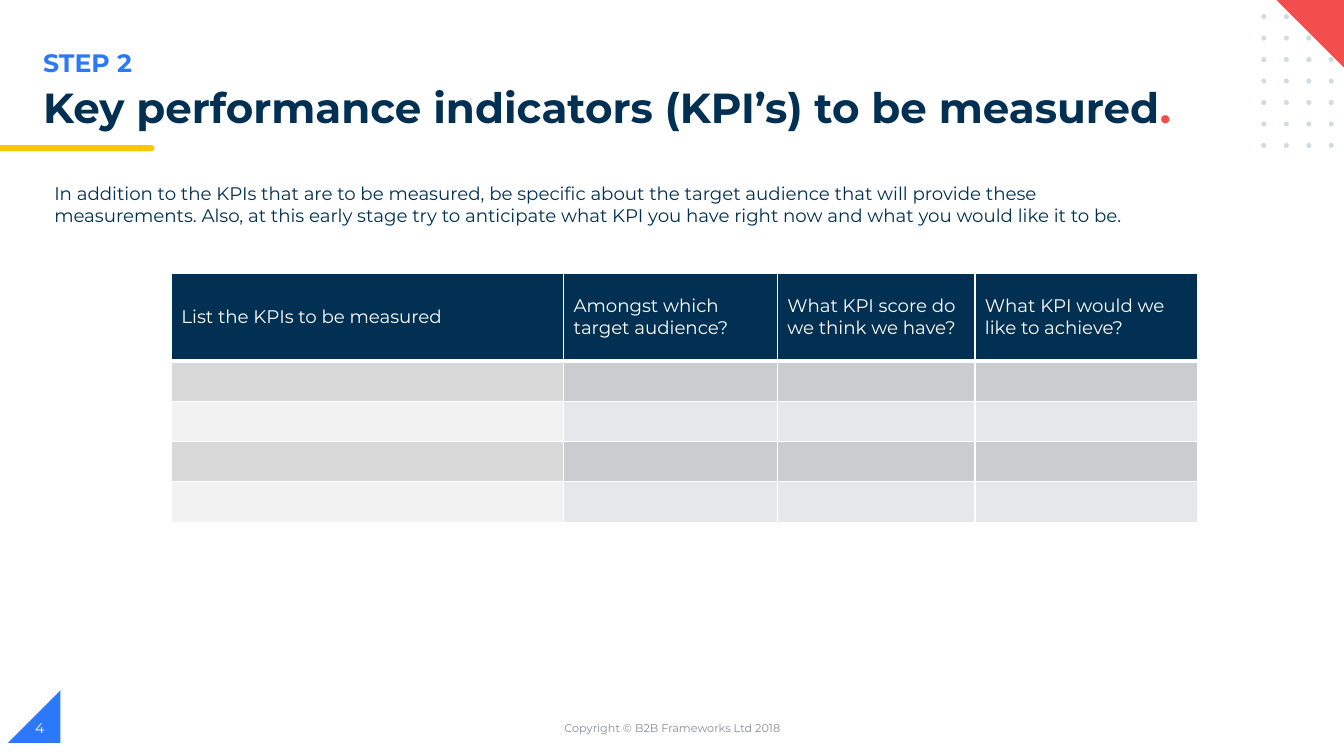
from lxml import etree
from pptx import Presentation
from pptx.dml.color import RGBColor
from pptx.enum import shapes, text
from pptx.oxml import ns
from pptx.util import Inches, Pt

NAVY = RGBColor(0x02, 0x30, 0x53)
BLUE = RGBColor(0x2B, 0x79, 0xF8)
RED = RGBColor(0xF2, 0x4E, 0x4E)
GOLD = RGBColor(0xFF, 0xC6, 0x00)
MIST = RGBColor(0xD1, 0xDB, 0xE0)
GREY = RGBColor(0x88, 0x8C, 0x97)
WHITE = RGBColor(0xFF, 0xFF, 0xFF)
# First column and other columns, for odd and even rows
BANDS = [(RGBColor(0xD8, 0xD8, 0xD8), RGBColor(0xCA, 0xCC, 0xCF)),
         (RGBColor(0xF2, 0xF2, 0xF2), RGBColor(0xE6, 0xE7, 0xE9))]
KIND = shapes.MSO_SHAPE
MIDDLE = text.MSO_ANCHOR.MIDDLE


def write(para, words, size=13, color=NAVY, bold=False, font="Montserrat"):
    run = para.add_run()
    run.text = words
    run.font.name = font
    run.font.size = Pt(size)
    run.font.bold = bold
    run.font.color.rgb = color


def edge(cell, side, width):
    """Draw one white border of a table cell."""
    line = etree.Element(ns.qn("a:ln" + side), w=str(Pt(width)))
    fill = etree.SubElement(line, ns.qn("a:solidFill"))
    etree.SubElement(fill, ns.qn("a:srgbClr"), val=str(WHITE))
    return line


class Deck:
    def __init__(self):
        self.show = Presentation()
        self.show.slide_width = Inches(13.33)
        self.show.slide_height = Inches(7.5)
        self.slide = self.show.slides.add_slide(self.show.slide_layouts[6])

    def shape(self, kind, box, color):
        item = self.slide.shapes.add_shape(kind, *map(Inches, box))
        item.shadow.inherit = False
        item.fill.solid()
        item.fill.fore_color.rgb = color
        item.line.fill.background()
        return item

    def label(self, box, words, anchor=text.MSO_ANCHOR.TOP, **style):
        frame = self.slide.shapes.add_textbox(*map(Inches, box)).text_frame
        frame.word_wrap = True
        frame.vertical_anchor = anchor
        para = frame.paragraphs[0]
        write(para, words, **style)
        return para

    def table(self, left, top, cols, rows, heads):
        grid = self.slide.shapes.add_table(
            len(rows), len(cols), Inches(left), Inches(top),
            Inches(sum(cols)), Inches(sum(rows))).table
        for col, width in zip(grid.columns, cols):
            col.width = Inches(width)
        for r, height in enumerate(rows):
            grid.rows[r].height = Inches(height)
            for c, head in enumerate(heads):
                cell = grid.cell(r, c)
                cell.vertical_anchor = MIDDLE
                cell.margin_top = cell.margin_bottom = 0
                cell.fill.solid()
                if r == 0:
                    cell.fill.fore_color.rgb = NAVY
                    write(cell.text_frame.paragraphs[0], head, color=WHITE)
                else:
                    cell.fill.fore_color.rgb = BANDS[(r - 1) % 2][min(c, 1)]
                # The rule under the header row is heavier
                sides = {"L": 1, "R": 1, "T": 3 if r == 1 else 1,
                         "B": 3 if r == 0 else 1}
                props = cell._tc.get_or_add_tcPr()
                for i, (side, width) in enumerate(sides.items()):
                    props.insert(i, edge(cell, side, width))


def main():
    deck = Deck()

    # Page corner and title rule
    corner = deck.shape(KIND.RIGHT_TRIANGLE, (0.08, 6.85, 0.52, 0.52), BLUE)
    corner._element.spPr.get_or_add_xfrm().set("flipH", "1")
    deck.shape(KIND.FLOWCHART_TERMINATOR, (1.34, 1.44, 0.19, 0.06), GOLD)
    deck.shape(KIND.RECTANGLE, (0, 1.44, 1.41, 0.06), GOLD)

    # Dot grid under the red corner
    for row in range(7):
        for col in range(4):
            place = (12.51 + col * 0.223, 0.14 + row * 0.213, 0.05, 0.05)
            deck.shape(KIND.OVAL, place, MIST)
    flag = deck.shape(KIND.RIGHT_TRIANGLE, (12.65, -0.01, 0.72, 0.72), RED)
    flag.rotation = 180

    # KPI table
    deck.table(1.7, 2.71, [3.89, 2.12, 1.96, 2.21], [0.87] + [0.4] * 4,
               ["List the KPIs to be measured",
                "Amongst which target audience?",
                "What KPI score do we think we have?",
                "What KPI would we like to achieve?"])

    # Headings and introduction
    deck.label((0.44, 1.76, 11.06, 0.54),
               "In addition to the KPIs that are to be measured, be specific "
               "about the target audience that will provide these "
               "measurements. Also, at this early stage try to anticipate "
               "what KPI you have right now and what you would like it to be.")
    title = deck.label((0.33, 0.82, 11.9, 0.56),
                       "Key performance indicators (KPI’s) to be measured",
                       size=30, bold=True)
    title.line_spacing = 0.9
    write(title, ".", size=30, color=RED, bold=True)
    deck.label((0.33, 0.42, 6.69, 0.4), "STEP 2",
               size=18, color=BLUE, bold=True)

    # Footer
    foot = deck.label((4.42, 7.02, 4.5, 0.4),
                      "Copyright © B2B Frameworks Ltd 2018",
                      MIDDLE, size=8, color=GREY)
    foot.alignment = text.PP_ALIGN.CENTER
    deck.label((0.25, 7.02, 3, 0.4), "4", MIDDLE, size=10, color=WHITE)

    deck.show.save("out.pptx")


if __name__ == "__main__":
    main()
